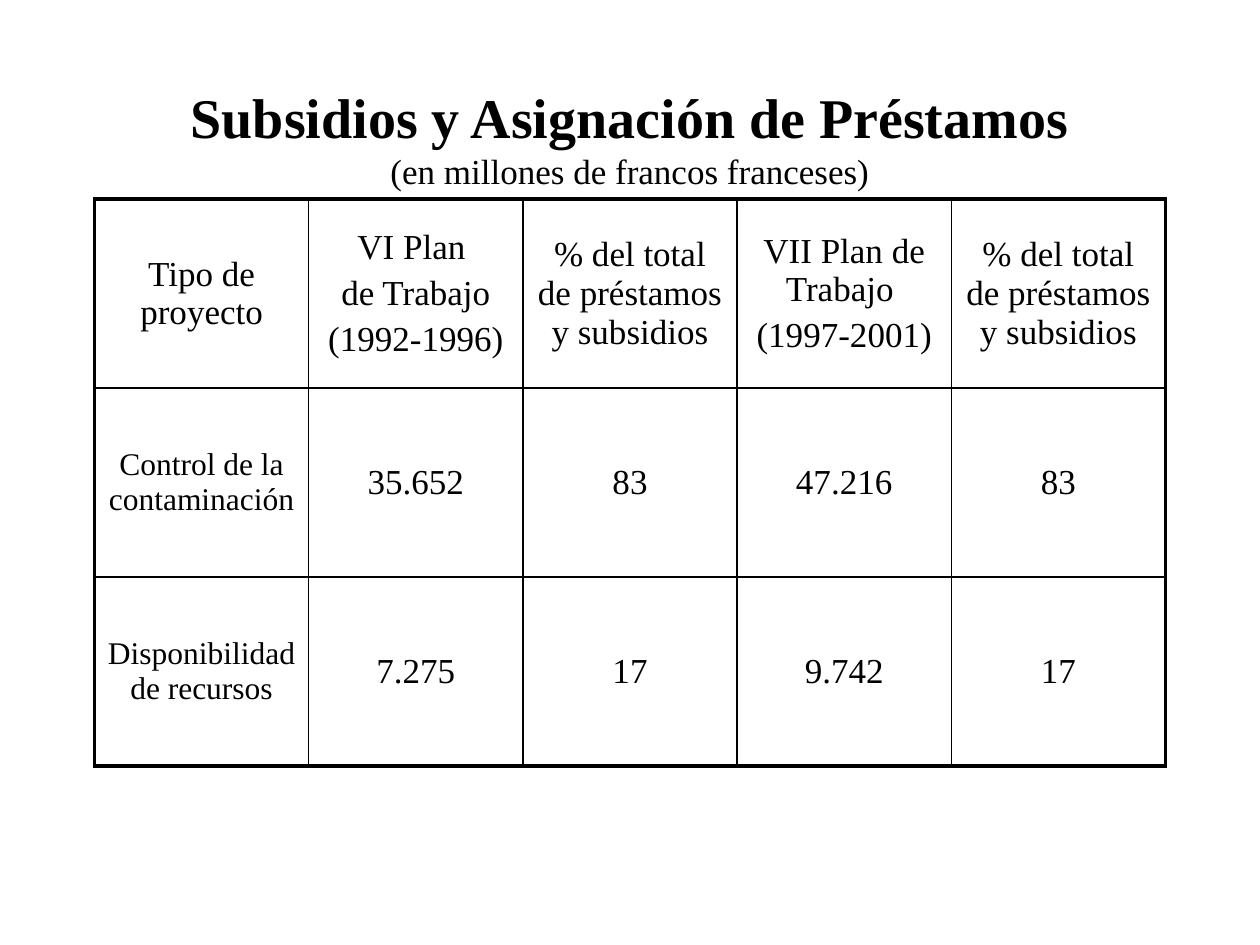
from lxml import etree
from pptx import Presentation
from pptx import util as u
from pptx.dml.color import RGBColor
from pptx.enum import text
from pptx.oxml import ns

FONT = "Times New Roman"
BLACK = "000000"
THIN, THICK = 1, 2.25
LEFT, WIDTH = 0.75, 8.5
TABLE_TOP, ROW_HEIGHT = 1.58, 1.5
SHARE = "% del total de préstamos y subsidios"
ROWS = [
    ["Tipo de proyecto", "VI Plan \nde Trabajo\n(1992-1996)", SHARE,
     "VII Plan de Trabajo \n(1997-2001)", SHARE],
    ["Control de la contaminación", "35.652", "83", "47.216", "83"],
    ["Disponibilidad de recursos", "7.275", "17", "9.742", "17"],
]


def color(value):
    return RGBColor.from_string(value)


def add_text(p, content, size=20, bold=False, before=0):
    """Append a formatted run to a centred paragraph."""
    p.alignment = text.PP_ALIGN.CENTER
    p.space_before = u.Pt(before)
    r = p.add_run()
    r.text = content
    r.font.name, r.font.size, r.font.bold = FONT, u.Pt(size), bold
    r.font.color.rgb = color(BLACK)


def add_title(s):
    box = s.shapes.add_textbox(*map(u.Inches, (LEFT, 0.67, WIDTH, 0.83)))
    tf = box.text_frame
    tf.word_wrap = True
    tf.vertical_anchor = text.MSO_ANCHOR.MIDDLE
    p = tf.paragraphs[0]
    add_text(p, "Subsidios y Asignación de Préstamos", size=32, bold=True)
    p.add_line_break()
    add_text(p, "(en millones de francos franceses)")


def set_borders(cell, widths):
    """Draw the sides of a cell; widths maps L, R, T, B to points."""
    props = cell._tc.get_or_add_tcPr()
    for i, (side, width) in enumerate(widths.items()):
        line = etree.Element(ns.qn(f"a:ln{side}"), w=str(u.Pt(width)))
        fill = etree.SubElement(line, ns.qn("a:solidFill"))
        etree.SubElement(fill, ns.qn("a:srgbClr"), val=BLACK)
        props.insert(i, line)


def add_grid(s):
    n_rows, n_cols = len(ROWS), len(ROWS[0])
    frame = s.shapes.add_table(n_rows, n_cols, *map(
        u.Inches, (LEFT, TABLE_TOP, WIDTH, n_rows * ROW_HEIGHT)))
    table = frame.table
    table.first_row = table.horz_banding = False
    for i, row in enumerate(ROWS):
        for j, content in enumerate(row):
            cell = table.cell(i, j)
            cell.fill.background()
            cell.vertical_anchor = text.MSO_ANCHOR.MIDDLE
            size = 18 if i and not j else 20
            tf = cell.text_frame
            for k, part in enumerate(content.split("\n")):
                p = tf.add_paragraph() if k else tf.paragraphs[0]
                add_text(p, part, size=size, before=size * 0.2)
            outer = {"L": j == 0, "R": j == n_cols - 1,
                     "T": i == 0, "B": i == n_rows - 1}
            set_borders(cell, {side: THICK if edge else THIN
                               for side, edge in outer.items()})


def main():
    prs = Presentation()
    prs.slide_width, prs.slide_height = u.Inches(10), u.Inches(7.5)
    s = prs.slides.add_slide(prs.slide_layouts[6])
    add_title(s)
    add_grid(s)
    prs.save("out.pptx")


if __name__ == "__main__":
    main()
